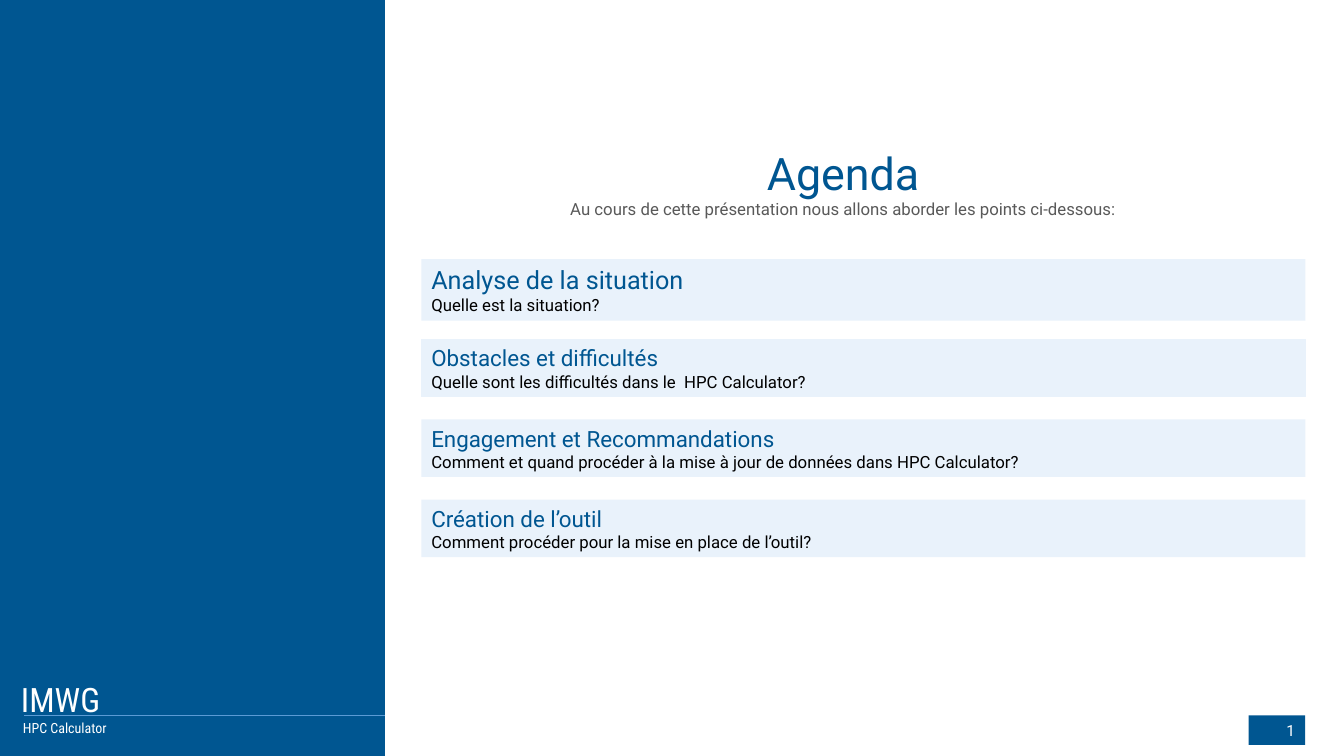
from pptx import Presentation
from pptx.dml.color import RGBColor
from pptx.enum.shapes import MSO_CONNECTOR, MSO_SHAPE
from pptx.enum.text import MSO_ANCHOR, PP_ALIGN
from pptx.oxml.ns import qn
from pptx.util import Cm, Pt
from lxml.etree import SubElement

BLUE, PALE, WHITE, BLACK, GREY = "005691", "E9F2FB", "FFFFFF", "000000", "595959"


def rgb(value):
    return RGBColor.from_string(value)


class Deck:
    font = "Roboto"
    condensed = "Roboto Condensed"

    def __init__(self, prs):
        self.slide = prs.slides.add_slide(prs.slide_layouts[6])

    def set_lines(self, sp, lines, align, font):
        tf = sp.text_frame
        tf.word_wrap = True
        tf.vertical_anchor = MSO_ANCHOR.MIDDLE
        tf.text = "\n".join(text for text, size, color in lines)
        for p, (text, size, color) in zip(tf.paragraphs, lines):
            p.alignment = align
            for r in p.runs:
                r.font.name = font
                r.font.size = Pt(size)
                r.font.color.rgb = rgb(color)

    def box(self, x, y, w, h, fill, lines=(), align=PP_ALIGN.LEFT):
        sp = self.slide.shapes.add_shape(MSO_SHAPE.RECTANGLE, Cm(x), Cm(y), Cm(w), Cm(h))
        sp.shadow.inherit = False
        sp.fill.solid()
        sp.fill.fore_color.rgb = rgb(fill)
        sp.line.fill.background()
        if lines:
            self.set_lines(sp, lines, align, self.font)
        return sp

    def text(self, x, y, w, h, lines, align=PP_ALIGN.LEFT, font=font):
        sp = self.slide.shapes.add_textbox(Cm(x), Cm(y), Cm(w), Cm(h))
        self.set_lines(sp, lines, align, font)

    def line(self, x1, y1, x2, y2, color, width):
        sp = self.slide.shapes.add_connector(
            MSO_CONNECTOR.STRAIGHT, Cm(x1), Cm(y1), Cm(x2), Cm(y2))
        sp.line.color.rgb = rgb(color)
        sp.line.width = Pt(width)
        SubElement(sp._element.spPr, qn("a:effectLst"))


def main():
    prs = Presentation()
    prs.slide_width, prs.slide_height = Cm(33.87), Cm(19.05)
    s = Deck(prs)

    s.box(0, 0, 9.7, 19.05, BLUE)
    s.text(0.33, 18.01, 7.37, 0.69, [("HPC Calculator", 10, WHITE)], font=s.condensed)
    s.text(0.28, 16.99, 7.37, 1.27, [("IMWG", 24, WHITE)], font=s.condensed)
    s.line(0.61, 18.03, 9.7, 18.03, "5B9BD5", 0.5)

    s.text(10.11, 3.53, 22.28, 2.13, [
        ("Agenda", 32, BLUE),
        ("Au cours de cette présentation nous allons aborder les points ci-dessous:", 12, GREY),
    ], PP_ALIGN.CENTER)

    topics = [
        ("Analyse de la situation", 18, 1.55, "Quelle est la situation?"),
        ("Obstacles et difficultés", 16, 1.45,
         "Quelle sont les difficultés dans le  HPC Calculator?"),
        ("Engagement et Recommandations", 16, 1.45,
         "Comment et quand procéder à la mise à jour de données dans HPC Calculator?"),
        ("Création de l’outil", 16, 1.45,
         "Comment procéder pour la mise en place de l’outil?"),
    ]
    for i, (heading, size, height, question) in enumerate(topics):
        sp = s.box(10.62, 6.53 + 2.02 * i, 22.28, height, PALE,
                   [(heading, size, BLUE), (question, 12, BLACK)])
        if i == 1:
            sp.line.color.rgb = rgb(PALE)
            sp.line.width = Pt(0.75)

    s.box(31.47, 18.03, 1.42, 0.74, BLUE, [("1", 11, WHITE)], PP_ALIGN.RIGHT)
    prs.save("out.pptx")


if __name__ == "__main__":
    main()
